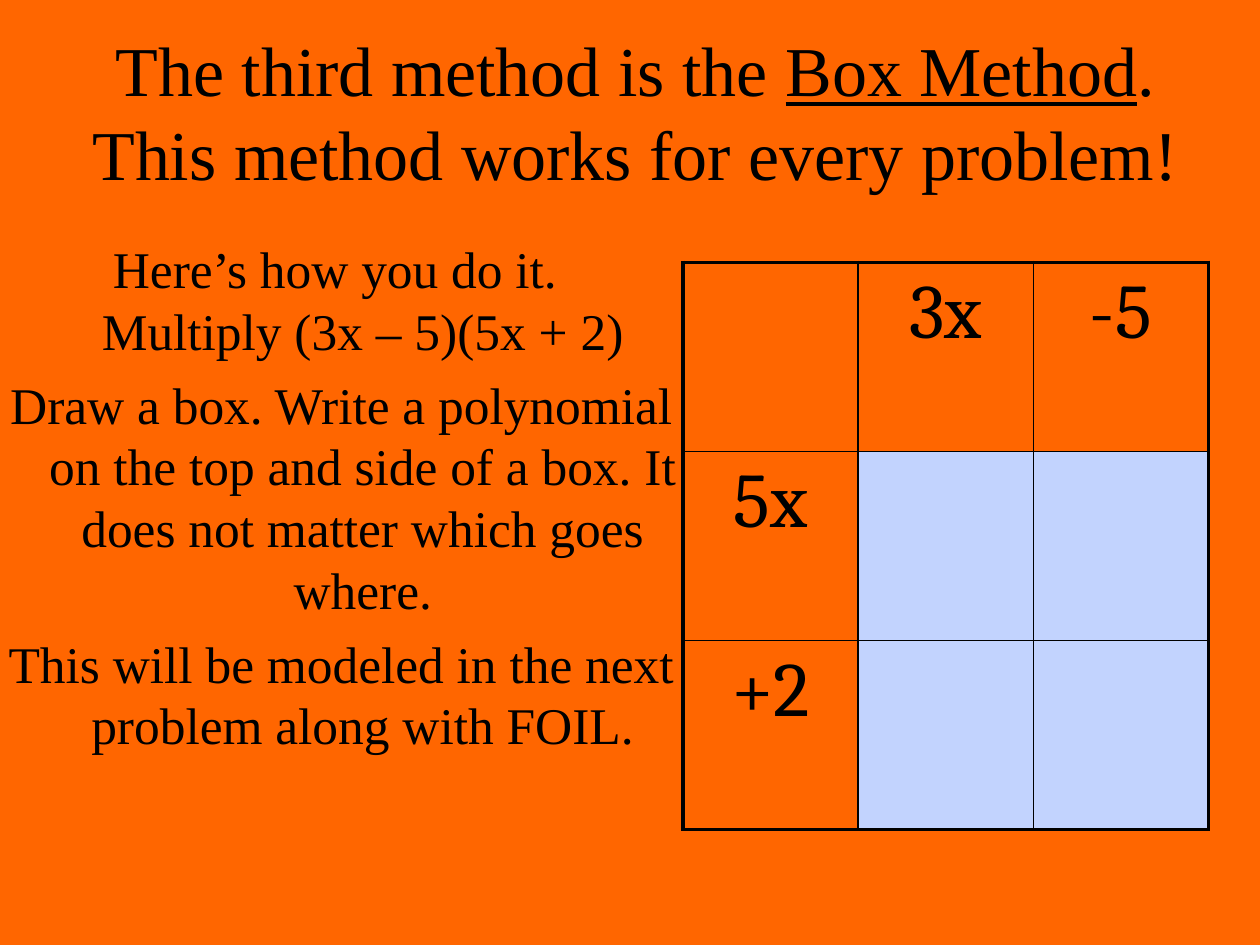
from dataclasses import dataclass

from lxml import etree
from pptx import Presentation, util as u
from pptx.dml.color import RGBColor
from pptx.enum import text
from pptx.oxml.ns import qn


@dataclass(frozen=True)
class Theme:
    background: str = "FF6600"
    ink: str = "000000"
    product: str = "C2D3FE"
    serif: str = "Times New Roman"
    math: str = "Cambria"
    title_size: float = 40
    body_size: float = 29.4
    cell_size: float = 44
    outer_line: float = 2.25
    inner_line: float = 1
    inset: float = 0.13


THEME = Theme()


def add_run(p, content, size, font, underline=None):
    r = p.add_run()
    r.text = content
    r.font.size = u.Pt(size)
    r.font.name = font
    r.font.underline = underline
    r.font.color.rgb = RGBColor.from_string(THEME.ink)


def add_text_box(s, box, anchor):
    tf = s.shapes.add_textbox(*(u.Cm(v) for v in box)).text_frame
    tf.word_wrap = True
    tf.vertical_anchor = anchor
    tf.margin_left = tf.margin_right = u.Cm(THEME.inset)
    tf.margin_top = tf.margin_bottom = u.Cm(THEME.inset)
    return tf


def add_title(s, box):
    p = add_text_box(s, box, text.MSO_ANCHOR.MIDDLE).paragraphs[0]
    p.alignment = text.PP_ALIGN.CENTER
    for content, underline in (
        ("The third method is the ", None),
        ("Box Method", True),
        (". This method works for every problem!", None),
    ):
        add_run(p, content, THEME.title_size, THEME.serif, underline)


def add_steps(s, box, steps):
    tf = add_text_box(s, box, text.MSO_ANCHOR.TOP)
    hanging = u.Cm(0.86)
    for i, lines in enumerate(steps):
        p = tf.add_paragraph() if i else tf.paragraphs[0]
        p.alignment = text.PP_ALIGN.CENTER
        p.space_before = u.Pt(7)
        pPr = p._p.get_or_add_pPr()
        pPr.set("marL", str(hanging))
        pPr.set("indent", str(-hanging))
        for j, line in enumerate(lines):
            if j:
                p.add_line_break()
            add_run(p, line, THEME.body_size, THEME.serif)


def set_borders(cell, widths):
    tcPr = cell._tc.get_or_add_tcPr()
    for i, (side, width) in enumerate(zip("LRTB", widths)):
        ln = etree.Element(qn(f"a:ln{side}"), w=str(u.Pt(width)))
        fill = etree.SubElement(ln, qn("a:solidFill"))
        etree.SubElement(fill, qn("a:srgbClr"), val=THEME.ink)
        tcPr.insert(i, ln)


def add_multiplication_box(s, box, top_terms, side_terms):
    rows, cols = len(side_terms) + 1, len(top_terms) + 1
    table = s.shapes.add_table(rows, cols, *(u.Cm(v) for v in box)).table
    table.first_row = table.horz_banding = False
    labels = {(0, c): term for c, term in enumerate(top_terms, 1)}
    labels.update({(r, 0): term for r, term in enumerate(side_terms, 1)})
    for row in range(rows):
        for col in range(cols):
            cell = table.cell(row, col)
            cell.margin_left = cell.margin_right = u.Cm(THEME.inset)
            cell.margin_top = cell.margin_bottom = u.Cm(THEME.inset)
            if row and col:
                cell.fill.solid()
                cell.fill.fore_color.rgb = RGBColor.from_string(THEME.product)
            else:
                cell.fill.background()
            edges = (col == 0, col == cols - 1, row == 0, row == rows - 1)
            set_borders(cell, [THEME.outer_line if edge else THEME.inner_line
                               for edge in edges])
            if (row, col) in labels:
                p = cell.text_frame.paragraphs[0]
                p.alignment = text.PP_ALIGN.CENTER
                p.space_before = u.Pt(10)
                add_run(p, labels[row, col], THEME.cell_size, THEME.math)


def main():
    prs = Presentation()
    prs.slide_width, prs.slide_height = u.Cm(25.4), u.Cm(19.05)
    s = prs.slides.add_slide(prs.slide_layouts[6])
    s.background.fill.solid()
    s.background.fill.fore_color.rgb = RGBColor.from_string(THEME.background)
    add_title(s, (0.84, 0.43, 23.93, 3.6))
    add_steps(s, (0, 4.65, 13.77, 11.43), (
        ("Here’s how you do it. ", "Multiply (3x – 5)(5x + 2)"),
        ("Draw a box. Write a polynomial on the top and side of a box. "
         "It does not matter which goes where.",),
        ("This will be modeled in the next problem along with FOIL.",),
    ))
    add_multiplication_box(s, (13.77, 5.29, 10.59, 11.43),
                           ("3x", "-5"), ("5x", "+2"))
    prs.save("out.pptx")


if __name__ == "__main__":
    main()
